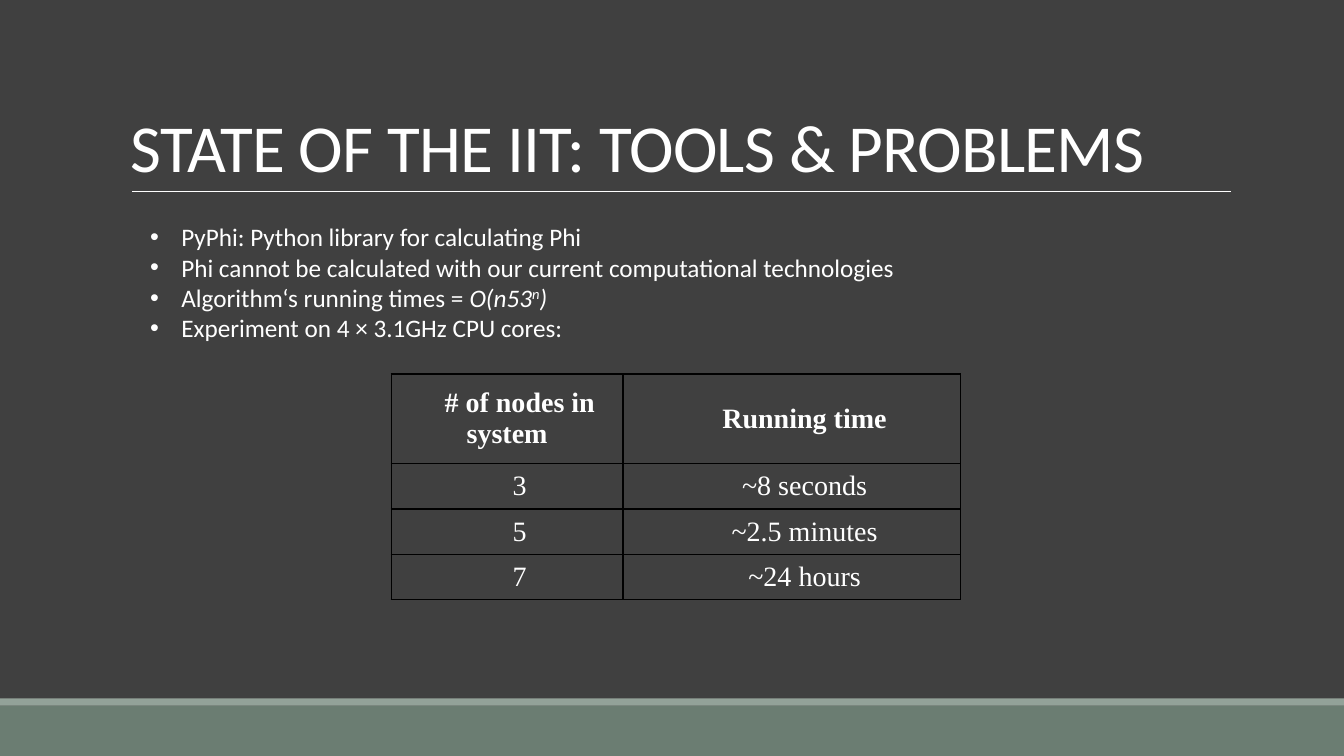
"""Build the slide on IIT tools and problems with its running-time table."""
from dataclasses import dataclass

from lxml.etree import SubElement
from pptx import Presentation
from pptx.dml.color import RGBColor
from pptx.enum.shapes import MSO_CONNECTOR, MSO_SHAPE
from pptx.enum.text import MSO_ANCHOR, PP_ALIGN
from pptx.oxml.ns import qn
from pptx.slide import Slide
from pptx.table import _Cell
from pptx.text.text import TextFrame, _Paragraph
from pptx.util import Inches, Pt

CHARCOAL = RGBColor(0x40, 0x40, 0x40)
SAGE = RGBColor(0x6B, 0x7D, 0x72)
LIGHT_SAGE = RGBColor(0x93, 0xA2, 0x99)
WHITE = RGBColor(0xFF, 0xFF, 0xFF)
BORDER_HEX = "000000"


@dataclass(frozen=True)
class Band:
    top: float
    height: float
    color: RGBColor


@dataclass(frozen=True)
class Part:
    text: str
    italic: bool = False
    baseline: int = 0


FOOTER_BANDS = [Band(7, 0.5, SAGE), Band(6.93, 0.07, LIGHT_SAGE)]
POINTS = [
    [Part("PyPhi: Python library for calculating Phi")],
    [Part("Phi cannot be calculated with our current computational technologies")],
    [
        Part("Algorithm‘s running times = "),
        Part("O(n53", italic=True),
        Part("n", italic=True, baseline=30),
        Part(")", italic=True),
    ],
    [Part("Experiment on 4 × 3.1GHz CPU cores:")],
]
RUNNING_TIMES = [
    ("# of nodes in system", "Running time"),
    ("3", "~8 seconds"),
    ("5", "~2.5 minutes"),
    ("7", "~24 hours"),
]
COLUMN_WIDTHS = (2.3, 3.35)
ROW_HEIGHTS = (0.89, 0.45, 0.45, 0.45)


def add_text(paragraph: _Paragraph, text: str, *, size: float, font: str = "Calibri",
             bold: bool = False, italic: bool = False, baseline: int = 0,
             spacing: float = 0) -> None:
    run = paragraph.add_run()
    run.text = text
    run.font.size = Pt(size)
    run.font.name = font
    run.font.bold = bold
    run.font.italic = italic
    run.font.color.rgb = WHITE
    properties = run.font._element
    if baseline:
        properties.set("baseline", str(baseline * 1000))
    if spacing:
        properties.set("spc", str(int(spacing * 100)))


def set_indent(paragraph: _Paragraph, margin: float, first_line: float) -> None:
    properties = paragraph._p.get_or_add_pPr()
    properties.set("marL", str(Inches(margin)))
    properties.set("indent", str(Inches(first_line)))


def add_frame(slide: Slide, left: float, top: float, width: float, height: float) -> TextFrame:
    frame = slide.shapes.add_textbox(
        Inches(left), Inches(top), Inches(width), Inches(height)).text_frame
    frame.word_wrap = True
    return frame


def add_band(slide: Slide, band: Band, width: int) -> None:
    strip = slide.shapes.add_shape(
        MSO_SHAPE.RECTANGLE, 0, Inches(band.top), width, Inches(band.height))
    strip.shadow.inherit = False
    strip.fill.solid()
    strip.fill.fore_color.rgb = band.color
    strip.line.fill.background()


def add_title(slide: Slide) -> None:
    frame = add_frame(slide, 1.2, 0.31, 11, 1.59)
    frame.vertical_anchor = MSO_ANCHOR.BOTTOM
    heading = frame.paragraphs[0]
    heading.line_spacing = 0.85
    add_text(heading, "STATE OF THE IIT: TOOLS & PROBLEMS", size=48, spacing=-0.5)

    rule = slide.shapes.add_connector(
        MSO_CONNECTOR.STRAIGHT, Inches(1.31), Inches(1.9), Inches(12.21), Inches(1.9))
    rule.line.color.rgb = WHITE
    rule.line.width = Pt(0.5)
    SubElement(rule._element.spPr, qn("a:effectLst"))


def add_points(slide: Slide) -> None:
    frame = add_frame(slide, 1.39, 2.15, 10.81, 1.31)
    for index, parts in enumerate(POINTS):
        point = frame.add_paragraph() if index else frame.paragraphs[0]
        set_indent(point, 0.31, -0.31)
        properties = point._p.get_or_add_pPr()
        SubElement(properties, qn("a:buFont"), typeface="Arial")
        SubElement(properties, qn("a:buChar"), char="•")
        for part in parts:
            add_text(point, part.text, size=18, italic=part.italic, baseline=part.baseline)


def add_borders(cell: _Cell) -> None:
    properties = cell._tc.get_or_add_tcPr()
    for position, side in enumerate(("lnL", "lnR", "lnT", "lnB")):
        border = properties.makeelement(qn(f"a:{side}"), {"w": str(Pt(1))})
        fill = SubElement(border, qn("a:solidFill"))
        SubElement(fill, qn("a:srgbClr"), val=BORDER_HEX)
        properties.insert(position, border)


def fill_cell(cell: _Cell, text: str, bold: bool) -> None:
    cell.fill.background()
    cell.vertical_anchor = MSO_ANCHOR.MIDDLE
    cell.margin_left = cell.margin_right = Inches(0.07)
    cell.margin_top = cell.margin_bottom = 0
    entry = cell.text_frame.paragraphs[0]
    entry.alignment = PP_ALIGN.CENTER
    set_indent(entry, 0, 0.25)
    add_text(entry, text, size=20, font="Times New Roman", bold=bold)
    add_borders(cell)


def add_running_times(slide: Slide) -> None:
    table = slide.shapes.add_table(
        len(RUNNING_TIMES), len(COLUMN_WIDTHS), Inches(3.88), Inches(3.71),
        Inches(sum(COLUMN_WIDTHS)), Inches(sum(ROW_HEIGHTS))).table
    table.horz_banding = False
    for column, width in zip(table.columns, COLUMN_WIDTHS):
        column.width = Inches(width)
    for index, (row, height) in enumerate(zip(table.rows, ROW_HEIGHTS)):
        row.height = Inches(height)
        for cell, text in zip(row.cells, RUNNING_TIMES[index]):
            fill_cell(cell, text, bold=index == 0)


def main() -> None:
    deck = Presentation()
    deck.slide_width = Inches(13.33)
    deck.slide_height = Inches(7.5)
    slide = deck.slides.add_slide(deck.slide_layouts[6])
    slide.background.fill.solid()
    slide.background.fill.fore_color.rgb = CHARCOAL
    for band in FOOTER_BANDS:
        add_band(slide, band, deck.slide_width)
    add_title(slide)
    add_running_times(slide)
    add_points(slide)
    deck.save("out.pptx")


if __name__ == "__main__":
    main()
